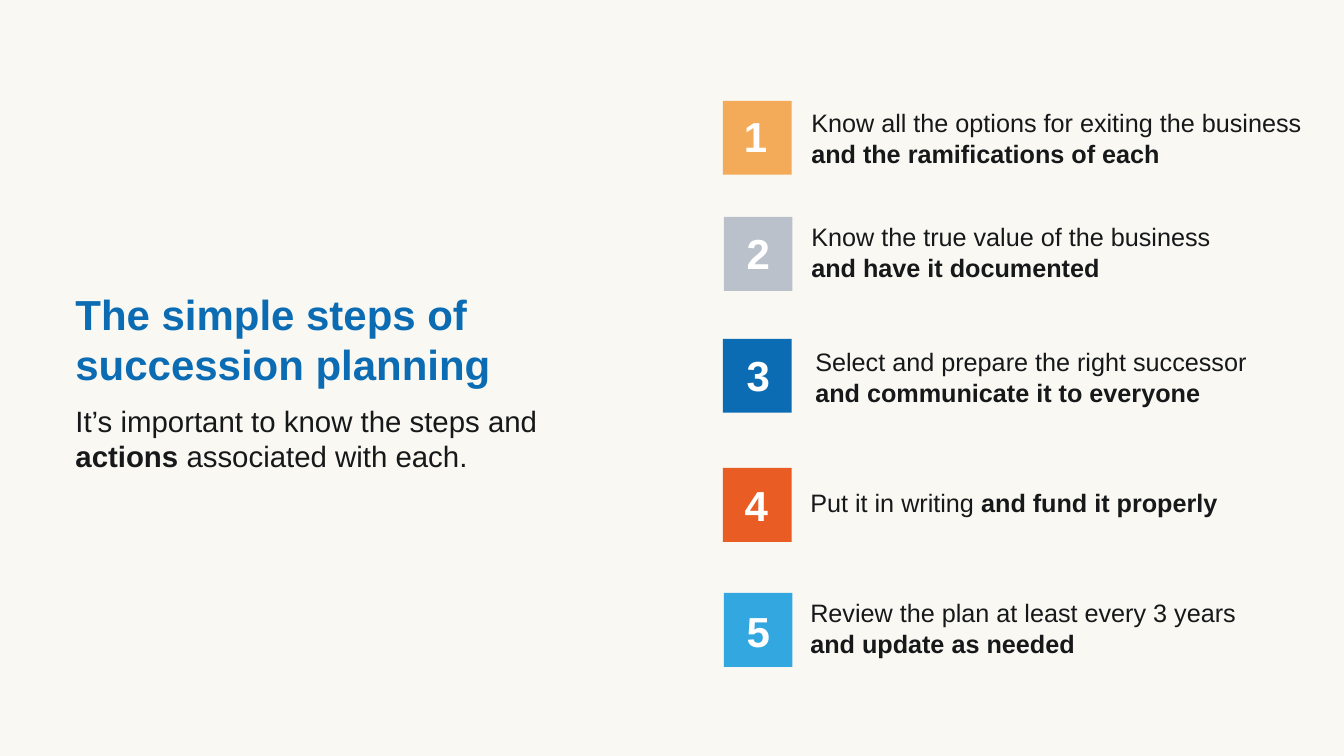
from pptx import Presentation
from pptx.dml.color import RGBColor as Rgb
from pptx.enum.shapes import MSO_SHAPE as Kind
from pptx.util import Pt

HUES = {
    "page": "F9F8F3", "ink": "161819", "white": "FFFFFF", "blue": "0C6CB3",
    "sand": "F3AB59", "gray": "BAC1CB", "rust": "E95C24", "sky": "33A7DF",
}
TITLE = [("The simple steps of succession planning", True)]
INTRO = [("It’s important to know the steps and ", False),
         ("actions ", True), ("associated with each.", False)]
STEPS = [
    {"hue": "sand", "tile": (516.4, 72), "digit": (524.2, 75.6), "text": (572.4, 73.4, 373.7),
     "say": ("Know all the options for exiting the business ", "and the ramifications of each")},
    {"hue": "gray", "tile": (517, 154.9), "digit": (526.3, 159.1), "text": (572.4, 154.8, 317.5),
     "say": ("Know the true value of the business ", "and have it documented")},
    {"hue": "blue", "tile": (516.4, 242), "digit": (526.3, 246.2), "text": (575.3, 244.1, 356.4),
     "say": ("Select and prepare the right successor ", "and communicate it to everyone")},
    {"hue": "rust", "tile": (516.4, 334.2), "digit": (524.9, 339.1), "text": (571.7, 344.9, 334.8),
     "say": ("Put it in writing ", "and fund it properly")},
    {"hue": "sky", "tile": (517, 423.5), "digit": (526.3, 429.1), "text": (571.7, 423.4, 332.6),
     "say": ("Review the plan at least every 3 years ", "and update as needed")},
]
TILE = (49, 52.8)
DIGIT = (47.5, 43.9)
LINE = 21.6
PAD = 7.2


def color(name):
    return Rgb.from_string(HUES[name])


def write(slide, box, runs, size, hue):
    frame = slide.shapes.add_textbox(*map(Pt, box)).text_frame
    frame.word_wrap = True
    para = frame.paragraphs[0]
    for words, bold in runs:
        run = para.add_run()
        run.text = words
        run.font.name = "Arial"
        run.font.size = Pt(size)
        run.font.bold = bold
        run.font.color.rgb = color(hue)


def tile(slide, spot, hue):
    box = slide.shapes.add_shape(Kind.RECTANGLE, *map(Pt, spot + TILE))
    box.shadow.inherit = False
    box.fill.solid()
    box.fill.fore_color.rgb = color(hue)
    box.line.fill.background()


def main():
    """Build the slide of succession planning steps."""
    deck = Presentation()
    deck.slide_width, deck.slide_height = Pt(960), Pt(540)
    slide = deck.slides.add_slide(deck.slide_layouts[6])
    slide.background.fill.solid()
    slide.background.fill.fore_color.rgb = color("page")

    write(slide, (46.8, 202.3, 326.9, 79.9), TITLE, 30, "blue")
    write(slide, (46.8, 284.4, 356.4, 58.3), INTRO, 21, "ink")
    for num, step in enumerate(STEPS, 1):
        tile(slide, step["tile"], step["hue"])
        write(slide, step["digit"] + DIGIT, [(str(num), True)], 30, "white")
        rows = 1 if num == 4 else 2
        plain, strong = step["say"]
        write(slide, step["text"] + (rows * LINE + PAD,),
              [(plain, False), (strong, True)], 18, "ink")
    deck.save("out.pptx")


if __name__ == "__main__":
    main()
